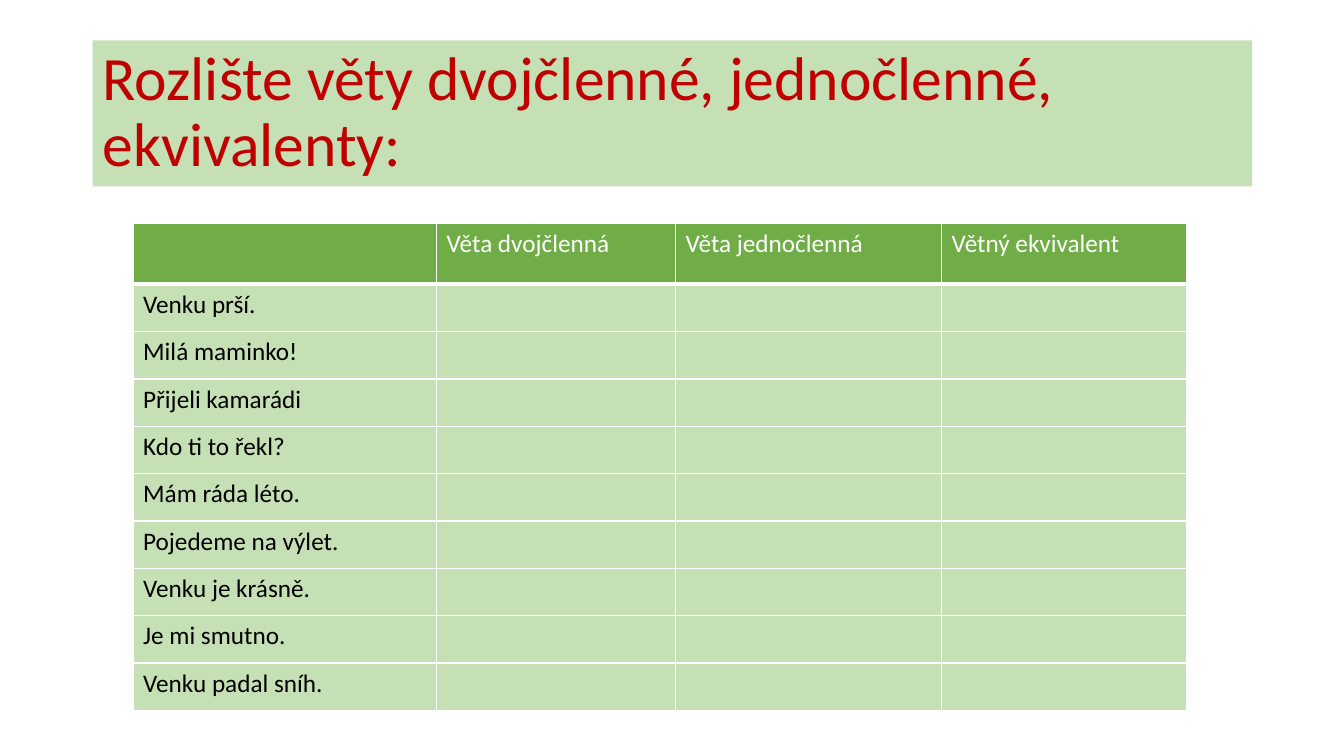
import pptx
import pptx.util
import pptx.dml.color
import pptx.enum.shapes
import pptx.enum.text
import lxml.etree
from pptx.util import Inches

COLORS = {
    "pale_green": "C5E0B4",
    "green": "70AD47",
    "red": "C00000",
    "white": "FFFFFF",
    "black": "000000",
}
FONT = "Calibri"
DRAWING_NS = "http://schemas.openxmlformats.org/drawingml/2006/main"

CATEGORIES = ["Věta dvojčlenná", "Věta jednočlenná", "Větný ekvivalent"]
SENTENCES = [
    "Venku prší.",
    "Milá maminko!",
    "Přijeli kamarádi",
    "Kdo ti to řekl?",
    "Mám ráda léto.",
    "Pojedeme na výlet.",
    "Venku je krásně.",
    "Je mi smutno.",
    "Venku padal sníh.",
]
COLUMN_WIDTHS = [3.01, 2.37, 2.64, 2.43]
HEADER_HEIGHT = 0.6
SENTENCE_HEIGHT = 0.47


def rgb(name):
    return pptx.dml.color.RGBColor.from_string(COLORS[name])


def fill_solid(target, color):
    target.fill.solid()
    target.fill.fore_color.rgb = rgb(color)


def write_text(frame, text, size, color):
    paragraph = frame.paragraphs[0]
    paragraph.text = text
    paragraph.font.name = FONT
    paragraph.font.size = pptx.util.Pt(size)
    paragraph.font.color.rgb = rgb(color)
    return paragraph


def add_heading(slide, text):
    heading = slide.shapes.add_shape(
        pptx.enum.shapes.MSO_SHAPE.RECTANGLE,
        Inches(0.92), Inches(0.4), Inches(11.5), Inches(1.45),
    )
    heading.shadow.inherit = False
    fill_solid(heading, "pale_green")
    heading.line.fill.background()
    frame = heading.text_frame
    frame.word_wrap = True
    frame.vertical_anchor = pptx.enum.text.MSO_ANCHOR.MIDDLE
    paragraph = write_text(frame, text, 44, "red")
    paragraph.alignment = pptx.enum.text.PP_ALIGN.LEFT
    paragraph.line_spacing = 0.9


def set_borders(cell, bottom_width):
    properties = cell._tc.get_or_add_tcPr()
    widths = {"lnL": 1, "lnR": 1, "lnT": 1, "lnB": bottom_width}
    for side, width in widths.items():
        border = lxml.etree.SubElement(
            properties, f"{{{DRAWING_NS}}}{side}", w=str(pptx.util.Pt(width))
        )
        fill = lxml.etree.SubElement(border, f"{{{DRAWING_NS}}}solidFill")
        lxml.etree.SubElement(fill, f"{{{DRAWING_NS}}}srgbClr", val=COLORS["white"])


def style_cell(cell, text, is_header):
    set_borders(cell, 3 if is_header else 1)
    fill_solid(cell, "green" if is_header else "pale_green")
    write_text(cell.text_frame, text, 18, "white" if is_header else "black")


def add_sentence_table(slide):
    rows = [["", *CATEGORIES]]
    rows += [[sentence] + [""] * len(CATEGORIES) for sentence in SENTENCES]
    heights = [HEADER_HEIGHT] + [SENTENCE_HEIGHT] * len(SENTENCES)
    table = slide.shapes.add_table(
        len(rows), len(COLUMN_WIDTHS), Inches(1.32), Inches(2.22),
        Inches(sum(COLUMN_WIDTHS)), Inches(sum(heights)),
    ).table
    table.first_row = False
    table.horz_banding = False
    for column, width in zip(table.columns, COLUMN_WIDTHS):
        column.width = Inches(width)
    for row_index, (texts, height) in enumerate(zip(rows, heights)):
        table.rows[row_index].height = Inches(height)
        for column_index, text in enumerate(texts):
            style_cell(table.cell(row_index, column_index), text, row_index == 0)


def main():
    presentation = pptx.Presentation()
    presentation.slide_width = Inches(13.33)
    presentation.slide_height = Inches(7.5)
    slide = presentation.slides.add_slide(presentation.slide_layouts[6])
    add_heading(slide, "Rozlište věty dvojčlenné, jednočlenné, ekvivalenty:")
    add_sentence_table(slide)
    presentation.save("out.pptx")


if __name__ == "__main__":
    main()
